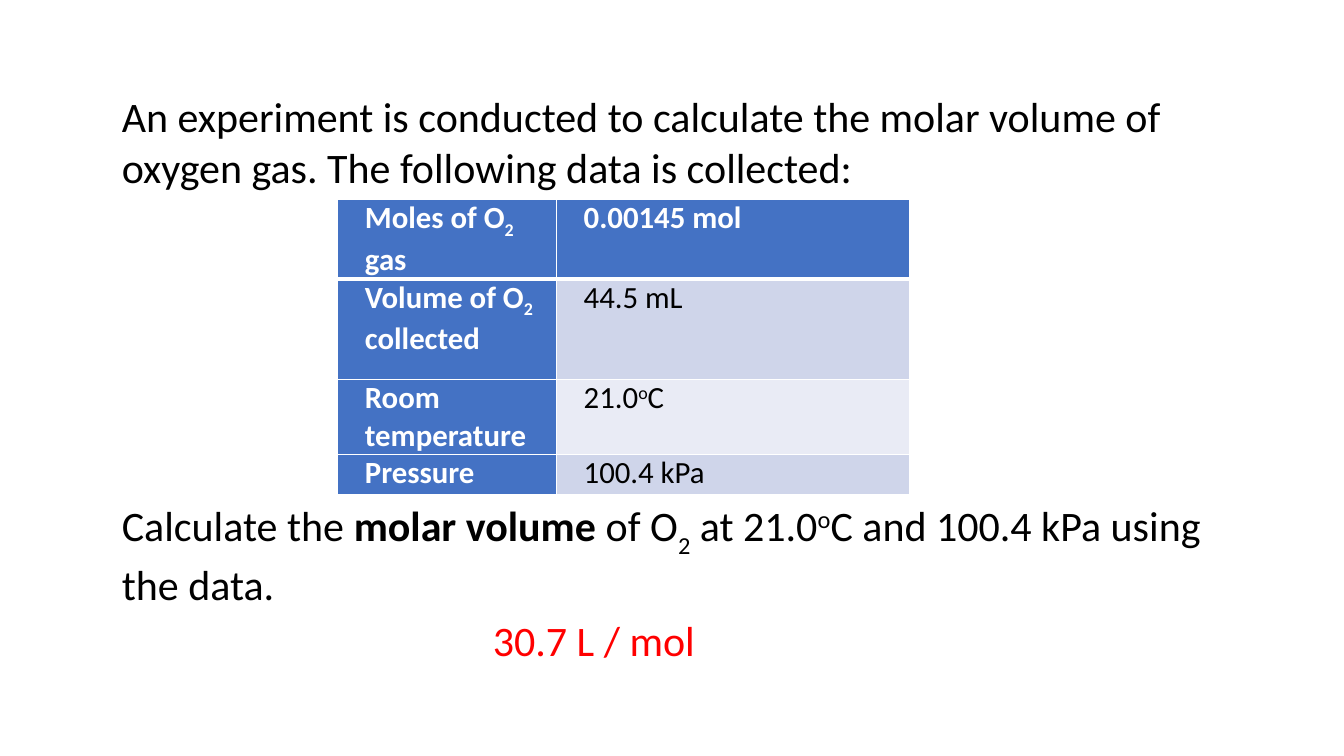
import dataclasses

import pptx
import pptx.dml.color
import pptx.enum.text
import pptx.oxml
import pptx.oxml.ns
import pptx.util

Inches = pptx.util.Inches
Pt = pptx.util.Pt
RGB = pptx.dml.color.RGBColor

WHITE = RGB(0xFF, 0xFF, 0xFF)
BLACK = RGB(0, 0, 0)
RED = RGB(0xFF, 0, 0)
BLUE = RGB(0x44, 0x72, 0xC4)
BANDS = (RGB(0xCF, 0xD5, 0xEA), RGB(0xE9, 0xEB, 0xF5))
FONT = "Calibri"


@dataclasses.dataclass(frozen=True)
class Piece:
    """A run of text; base is its shift in percent of the font size."""
    text: str
    bold: bool = False
    base: int = 0


@dataclasses.dataclass(frozen=True)
class Row:
    height: float
    label: list[Piece]
    value: list[Piece]


SUB = Piece("2", base=-25)
DEGREE = Piece("o", base=30)
ROWS = [
    Row(0.6, [Piece("Moles of O"), SUB, Piece(" gas")], [Piece("0.00145 mol")]),
    Row(1, [Piece("Volume of O"), SUB, Piece(" collected")], [Piece("44.5 mL")]),
    Row(0.6, [Piece("Room temperature")], [Piece("21.0"), DEGREE, Piece("C")]),
    Row(0.4, [Piece("Pressure")], [Piece("100.4 kPa")]),
]
WIDTHS = (2.17, 3.5)

INTRO = [Piece("An experiment is conducted to calculate the molar volume of "
               "oxygen gas. The following data is collected:")]
TASK = [
    Piece("Calculate the "), Piece("molar volume ", bold=True), Piece("of O"),
    Piece("2", base=-30), Piece(" at 21.0"), DEGREE,
    Piece("C and 100.4 kPa using the data."),
]
ANSWER = [Piece("30.7 L / mol")]


def write(para, pieces: list[Piece], size: float, color: RGB, bold: bool = False) -> None:
    for piece in pieces:
        run = para.add_run()
        run.text = piece.text
        font = run.font
        font.name, font.size = FONT, Pt(size)
        font.bold = bold or piece.bold
        font.color.rgb = color
        if piece.base:
            run._r.get_or_add_rPr().set("baseline", str(piece.base * 1000))


def add_text(slide, left: float, top: float, width: float, height: float,
             paras: list[list[Piece]], color: RGB, gap: float = 0) -> None:
    """Add a text box whose paragraphs stand gap points apart."""
    box = slide.shapes.add_textbox(Inches(left), Inches(top), Inches(width), Inches(height))
    frame = box.text_frame
    frame.word_wrap = True
    for i, pieces in enumerate(paras):
        para = frame.add_paragraph() if i else frame.paragraphs[0]
        if i:
            para.space_before = Pt(gap)
        write(para, pieces, 30, color)


def edge(cell, head: bool, below: bool) -> None:
    """Draw white borders, heavy between the head row and the row below it."""
    props = cell._tc.get_or_add_tcPr()
    heavy = {"B": head, "T": below}
    for i, side in enumerate("LRTB"):
        width = Pt(3 if heavy.get(side) else 1)
        line = pptx.oxml.parse_xml(
            f'<a:ln{side} {pptx.oxml.ns.nsdecls("a")} w="{width}"><a:solidFill>'
            f'<a:srgbClr val="{WHITE}"/></a:solidFill></a:ln{side}>')
        props.insert(i, line)


def add_data(slide) -> None:
    shape = slide.shapes.add_table(
        len(ROWS), len(WIDTHS), Inches(3.35), Inches(1.98),
        Inches(sum(WIDTHS)), Inches(sum(row.height for row in ROWS)))
    table = shape.table
    for col, width in zip(table.columns, WIDTHS):
        col.width = Inches(width)
    for r, row in enumerate(ROWS):
        table.rows[r].height = Inches(row.height)
        for c, pieces in enumerate((row.label, row.value)):
            cell = table.cell(r, c)
            strong = r == 0 or c == 0
            cell.margin_left = cell.margin_right = Inches(0.07)
            cell.margin_top = cell.margin_bottom = 0
            cell.fill.solid()
            cell.fill.fore_color.rgb = BLUE if strong else BANDS[(r - 1) % 2]
            edge(cell, r == 0, r == 1)
            para = cell.text_frame.paragraphs[0]
            para._p.get_or_add_pPr().set("marL", str(Inches(0.2)))
            write(para, pieces, 22, WHITE if strong else BLACK, strong)


def main() -> None:
    deck = pptx.Presentation()
    deck.slide_width, deck.slide_height = Inches(13.33), Inches(7.5)
    slide = deck.slides.add_slide(deck.slide_layouts[6])
    add_data(slide)
    add_text(slide, 1.11, 0.85, 11.11, 5.15, [INTRO, TASK], BLACK, gap=220)
    add_text(slide, 4.79, 6.05, 2.78, 0.61, [ANSWER], RED)
    deck.save("out.pptx")


if __name__ == "__main__":
    main()
